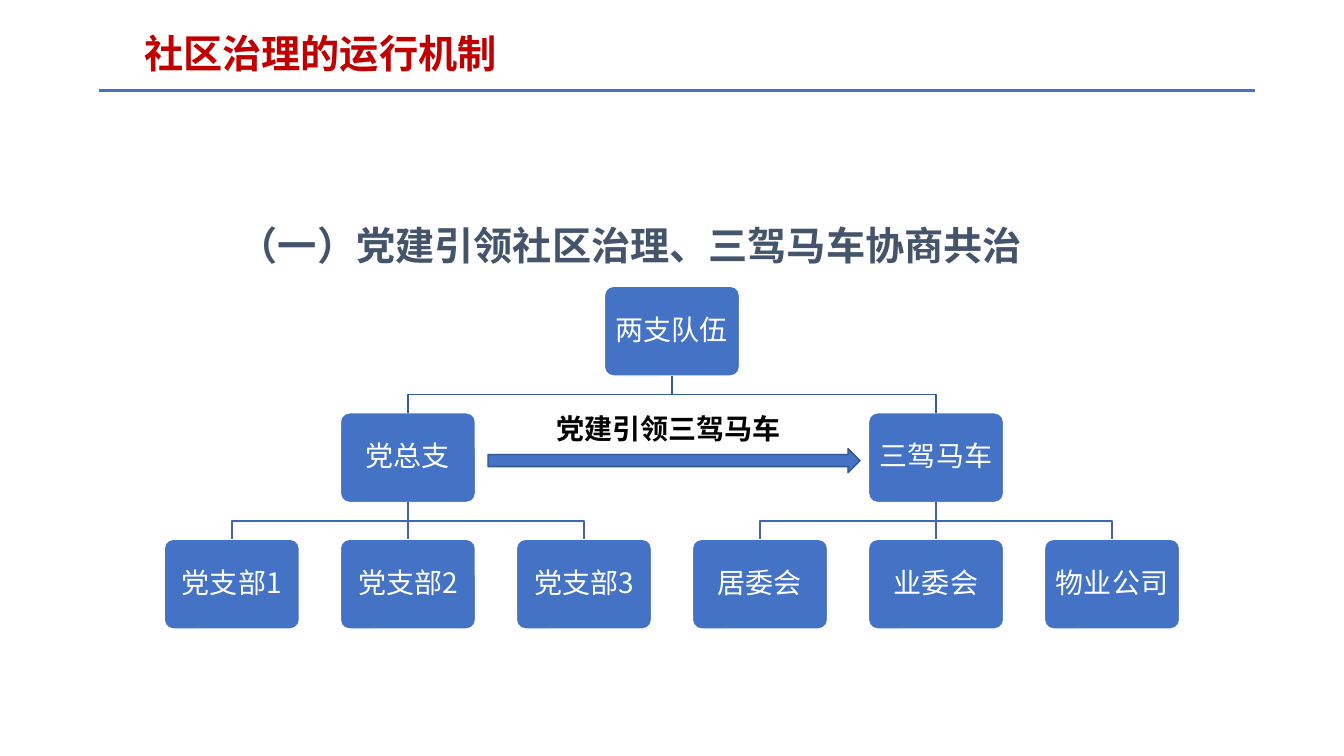
from pptx import Presentation
from pptx.dml.color import RGBColor
from pptx.enum.shapes import MSO_CONNECTOR, MSO_SHAPE
from pptx.enum.text import MSO_ANCHOR, MSO_AUTO_SIZE, PP_ALIGN
from pptx.oxml.ns import qn
from pptx.util import Inches, Pt
from lxml.etree import SubElement

FONT = "Noto Sans CJK SC"
BLUE = "4472C4"


def color(hex_value):
    return RGBColor.from_string(hex_value)


def write_text(shape, text, size, hex_value, bold=False, align=PP_ALIGN.LEFT):
    """Fill a shape with one line of text, in the same font for Latin and Chinese."""
    frame = shape.text_frame
    frame.word_wrap = True
    frame.auto_size = MSO_AUTO_SIZE.NONE
    paragraph = frame.paragraphs[0]
    paragraph.alignment = align
    run = paragraph.add_run()
    run.text = text
    formats = {"name": FONT, "size": Pt(size), "bold": bold}
    run.font.color.rgb = color(hex_value)
    for name, value in formats.items():
        setattr(run.font, name, value)
    SubElement(run.font._element, qn("a:ea"), typeface=FONT)
    return paragraph


presentation = Presentation()
presentation.slide_width = Inches(13.33)
presentation.slide_height = Inches(7.5)
slide = presentation.slides.add_slide(presentation.slide_layouts[5])
shapes = slide.shapes

# Title and rule
title = shapes.title
title_place = {"left": 1.33, "top": 0.24, "width": 7.05, "height": 0.57}
for name, value in title_place.items():
    setattr(title, name, Inches(value))
title.text_frame.vertical_anchor = MSO_ANCHOR.TOP
write_text(title, "社区治理的运行机制", 28, "C00000", True)

rule = shapes.add_connector(MSO_CONNECTOR.STRAIGHT, Inches(0.98), Inches(0.9),
                            Inches(12.45), Inches(0.9))
rule.line.color.rgb = color(BLUE)
rule.line.width = Pt(2.25)
SubElement(rule._element.spPr, qn("a:effectLst"))

# Subtitle and arrow with its label
subtitle = shapes.add_textbox(Inches(2.27), Inches(2.15), Inches(10.38), Inches(0.57))
write_text(subtitle, "（一）党建引领社区治理、三驾马车协商共治", 28, "44546A", True)

arrow = shapes.add_shape(MSO_SHAPE.RIGHT_ARROW, Inches(4.84), Inches(4.45),
                         Inches(3.69), Inches(0.24))
arrow.shadow.inherit = False
arrow.fill.solid()
arrow.fill.fore_color.rgb = color(BLUE)
arrow.line.color.rgb = color("325491")
arrow.line.width = Pt(1)

arrow_label = shapes.add_textbox(Inches(5.42), Inches(4.03), Inches(2.88), Inches(0.44))
write_text(arrow_label, "党建引领三驾马车", 20, "000000", True)

# Organisation chart: name, column, level, parent
LEFT, TOP = 1.63, 2.84
COLUMN_STEP, LEVEL_STEP = 8.73 / 5, 2.51 / 2
BOX_WIDTH, BOX_HEIGHT = 1.34, 0.89
LINK_COLORS = {1: "365B9D", 2: "3E67B2"}
units = [
    ("两支队伍", 2.5, 0, None),
    ("党总支", 1, 1, "两支队伍"),
    ("三驾马车", 4, 1, "两支队伍"),
    ("党支部1", 0, 2, "党总支"),
    ("党支部2", 1, 2, "党总支"),
    ("党支部3", 2, 2, "党总支"),
    ("居委会", 3, 2, "三驾马车"),
    ("业委会", 4, 2, "三驾马车"),
    ("物业公司", 5, 2, "三驾马车"),
]
boxes = {}
for unit, column, level, parent in units:
    box = shapes.add_shape(MSO_SHAPE.ROUNDED_RECTANGLE,
                           Inches(LEFT + column * COLUMN_STEP),
                           Inches(TOP + level * LEVEL_STEP),
                           Inches(BOX_WIDTH), Inches(BOX_HEIGHT))
    box.adjustments[0] = 0.1
    box.shadow.inherit = False
    box.fill.solid()
    box.fill.fore_color.rgb = color(BLUE)
    box.line.color.rgb = color("FFFFFF")
    box.line.width = Pt(1)
    frame = box.text_frame
    frame.vertical_anchor = MSO_ANCHOR.MIDDLE
    for side in ("left", "top", "right", "bottom"):
        setattr(frame, f"margin_{side}", Inches(0.08))
    paragraph = write_text(box, unit, 20, "FFFFFF", align=PP_ALIGN.CENTER)
    paragraph.line_spacing = 0.9
    boxes[unit] = box

    if parent is None:
        continue
    upper = boxes[parent]
    start_x, start_y = upper.left + upper.width // 2, upper.top + upper.height
    end_x, end_y = box.left + box.width // 2, box.top
    if box.left == upper.left:
        link = shapes.add_connector(MSO_CONNECTOR.STRAIGHT, start_x, start_y, end_x, end_y)
        link.begin_connect(upper, 2)
        link.end_connect(box, 0)
        SubElement(link._element.spPr, qn("a:effectLst"))
    else:
        middle_y = (start_y + end_y) // 2
        builder = shapes.build_freeform(start_x, start_y)
        builder.add_line_segments([(start_x, middle_y), (end_x, middle_y), (end_x, end_y)],
                                  close=False)
        link = builder.convert_to_shape()
        link.fill.background()
        link.shadow.inherit = False
    link.line.color.rgb = color(LINK_COLORS[level])
    link.line.width = Pt(1)

presentation.save("out.pptx")
